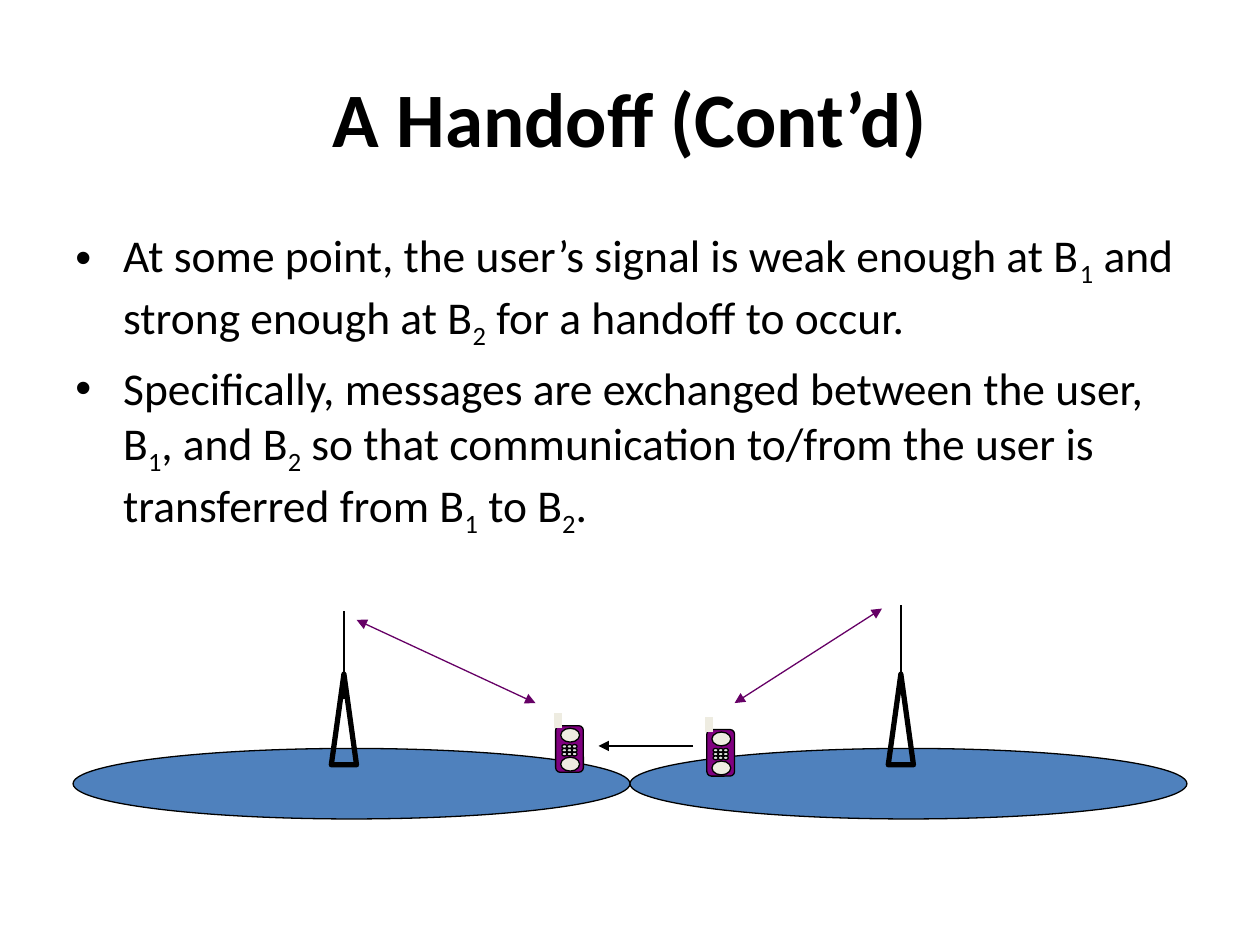
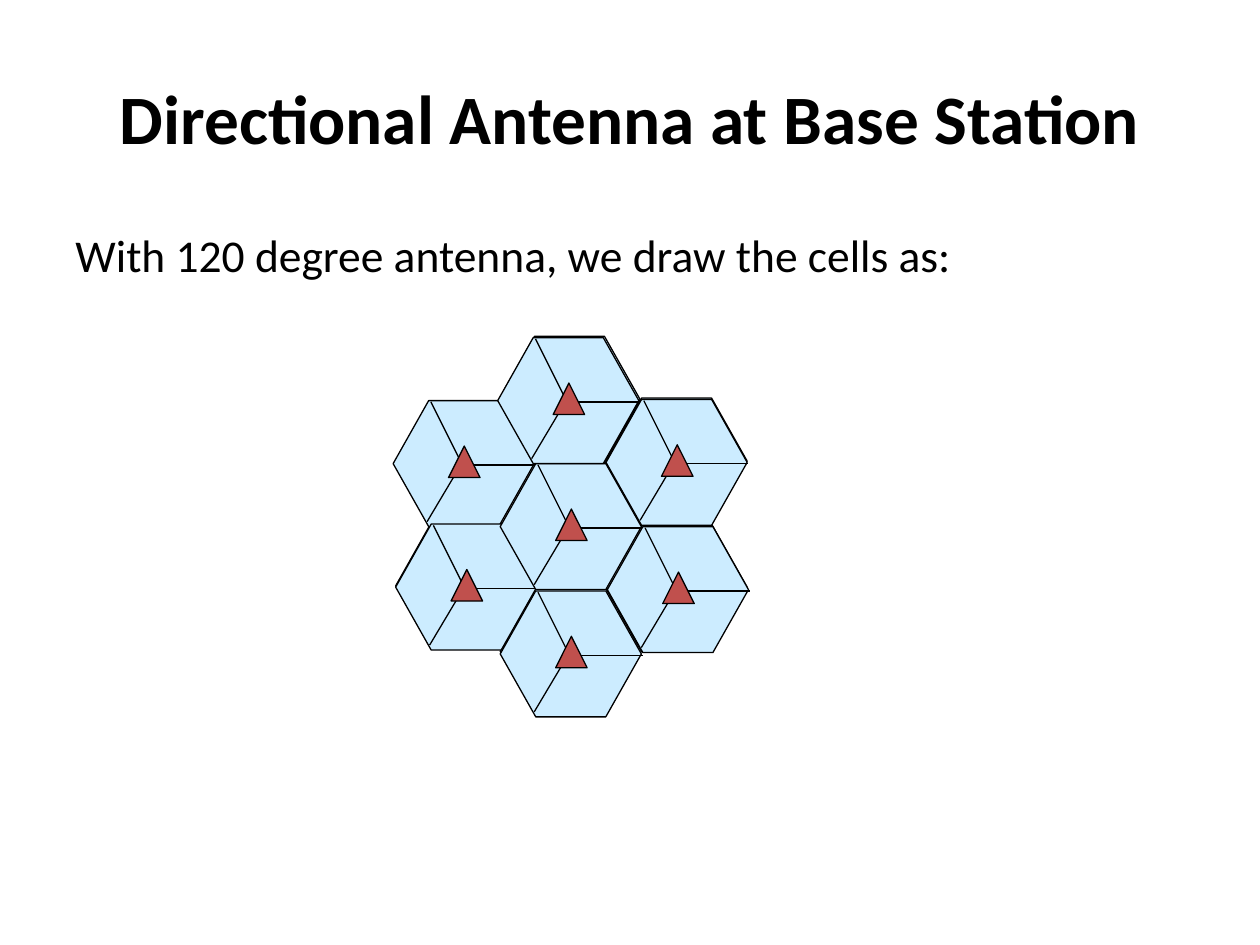
from lxml.etree import SubElement
from pptx import Presentation
from pptx.dml.color import RGBColor
from pptx.enum.shapes import MSO_CONNECTOR, MSO_SHAPE
from pptx.enum.text import MSO_ANCHOR, PP_ALIGN
from pptx.oxml.ns import qn
from pptx.util import Inches, Pt

BLACK = RGBColor(0, 0, 0)
BLUE = RGBColor(0x4F, 0x81, 0xBD)
PURPLE = RGBColor(0x80, 0, 0x80)
PLUM = RGBColor(0x66, 0, 0x66)
CREAM = RGBColor(0xEE, 0xEC, 0xE1)
GREY = RGBColor(0xDD, 0xDD, 0xDD)
PALE = RGBColor(0xCC, 0xEC, 0xFF)
RED = RGBColor(0xC0, 0x50, 0x4D)
FONT = "Calibri"

HANDOFF = [
    "At some point, the user’s signal is weak enough at B_1 and strong enough at B_2 "
    "for a handoff to occur.",
    "Specifically, messages are exchanged between the user, B_1, and B_2 so that "
    "communication to/from the user is transferred from B_1 to B_2.",
]
SECTOR = ["With 120 degree antenna, we draw the cells as:"]

TOWERS = [(0.58, 2.73, 5.55, 4.85), (5, 7.15, 5.5, 4.8)]
PHONES = [(5.61, 5.79), (4.41, 5.76)]
SIGNALS = [((5.83, 5.58), (7, 4.83)), ((4.25, 5.58), (2.83, 4.92))]
MOTION = ((5.5, 5.92), (4.75, 5.92))

BACKS = [(3.14, 4.15), (3.97, 4.67), (3.99, 3.67), (3.96, 2.67), (4.81, 3.16), (4.81, 4.16)]
CELLS = [(3.12, 3.18), (3.14, 4.16), (3.97, 3.68), (3.95, 2.68),
         (4.81, 3.17), (4.82, 4.18), (3.97, 4.69)]
SPOKES = [((0.3, 0.01), (0.55, 0.51)), ((0.55, 0.51), (1.13, 0.51)), ((0.52, 0.54), (0.27, 0.96))]


def add_box(slide, left, top, width, height):
    box = slide.shapes.add_textbox(Inches(left), Inches(top), Inches(width), Inches(height))
    box.text_frame.word_wrap = True
    return box.text_frame


def style(run, size, bold=False):
    run.font.name = FONT
    run.font.size = Pt(size)
    run.font.bold = bold
    run.font.color.rgb = BLACK


def add_title(slide, text, size):
    frame = add_box(slide, 0.5, 0.3, 9, 1.25)
    frame.vertical_anchor = MSO_ANCHOR.MIDDLE
    frame.text = text
    line = frame.paragraphs[0]
    line.alignment = PP_ALIGN.CENTER
    style(line.runs[0], size, True)


def add_body(slide, texts, bullet):
    frame = add_box(slide, 0.5, 1.75, 9, 4.95)
    for index, text in enumerate(texts):
        line = frame.add_paragraph() if index else frame.paragraphs[0]
        line.space_before = Pt(5.2)
        props = line._p.get_or_add_pPr()
        props.set("marL", str(Inches(0.38)))
        props.set("indent", str(Inches(-0.38)))
        if bullet:
            SubElement(props, qn("a:buFont")).set("typeface", "Arial")
            SubElement(props, qn("a:buChar")).set("char", "•")
        first, *rest = text.split("_")
        pieces = [(first, False)]
        for part in rest:
            pieces += [(part[0], True), (part[1:], False)]
        for words, low in pieces:
            run = line.add_run()
            run.text = words
            style(run, 26)
            if low:
                run._r.get_or_add_rPr().set("baseline", "-25000")


def add_part(slide, kind, left, top, width, height, fill=None, weight=0.75):
    part = slide.shapes.add_shape(kind, Inches(left), Inches(top), Inches(width), Inches(height))
    part.shadow.inherit = False
    if fill is None:
        part.fill.background()
    else:
        part.fill.solid()
        part.fill.fore_color.rgb = fill
    part.line.color.rgb = BLACK
    part.line.width = Pt(weight)
    return part


def add_line(slide, start, end, color=BLACK, weight=0.75, heads=()):
    points = [Inches(value) for value in (*start, *end)]
    line = slide.shapes.add_connector(MSO_CONNECTOR.STRAIGHT, *points)
    line.line.color.rgb = color
    line.line.width = Pt(weight)
    for head in heads:
        SubElement(line.line._get_or_add_ln(), qn(head)).set("type", "triangle")
    SubElement(line._element.spPr, qn("a:effectLst"))


def add_tower(slide, left, mast, base, tip):
    add_part(slide, MSO_SHAPE.OVAL, left, 5.94, 4.42, 0.56, BLUE)
    add_part(slide, MSO_SHAPE.ISOSCELES_TRIANGLE, mast - 0.1, 5.35, 0.2, 0.72, weight=3)
    add_line(slide, (mast, base), (mast, tip))


def add_phone(slide, x, y):
    add_part(slide, MSO_SHAPE.ROUNDED_RECTANGLE, x, y, 0.22, 0.37, PURPLE)
    for row in range(3):
        for col in range(3):
            add_part(slide, MSO_SHAPE.OVAL, x + 0.05 + 0.04 * col, y + 0.15 + 0.03 * row,
                     0.04, 0.03, GREY)
    add_line(slide, (x + 0.02, y + 0.02), (x + 0.02, y - 0.1), CREAM, 4.5)
    for drop in (0.25, 0.02):
        add_part(slide, MSO_SHAPE.OVAL, x + 0.04, y + drop, 0.15, 0.11, CREAM)


def add_hex(slide, x, y):
    part = add_part(slide, MSO_SHAPE.HEXAGON, x, y, 1.12, 1, PALE)
    part.adjustments[0] = 0.282


def add_cell(slide, x, y):
    add_hex(slide, x, y)
    for (x1, y1), (x2, y2) in SPOKES:
        add_line(slide, (x + x1, y + y1), (x + x2, y + y2))
    add_part(slide, MSO_SHAPE.ISOSCELES_TRIANGLE, x + 0.44, y + 0.36, 0.25, 0.25, RED)


def draw_handoff(slide):
    add_title(slide, "A Handoff (Cont’d)", 44)
    add_body(slide, HANDOFF, True)
    for tower in TOWERS:
        add_tower(slide, *tower)
    for phone in PHONES:
        add_phone(slide, *phone)
    for start, end in SIGNALS:
        add_line(slide, start, end, PLUM, heads=("a:headEnd", "a:tailEnd"))
    add_line(slide, *MOTION, heads=("a:tailEnd",))


def draw_sectors(slide):
    add_title(slide, "Directional Antenna at Base Station", 39.6)
    add_body(slide, SECTOR, False)
    for back in BACKS:
        add_hex(slide, *back)
    for cell in CELLS:
        add_cell(slide, *cell)


def main():
    deck = Presentation()
    deck.slide_width, deck.slide_height = Inches(10), Inches(7.5)
    for draw in (draw_handoff, draw_sectors):
        draw(deck.slides.add_slide(deck.slide_layouts[6]))
    deck.save("out.pptx")


if __name__ == "__main__":
    main()
